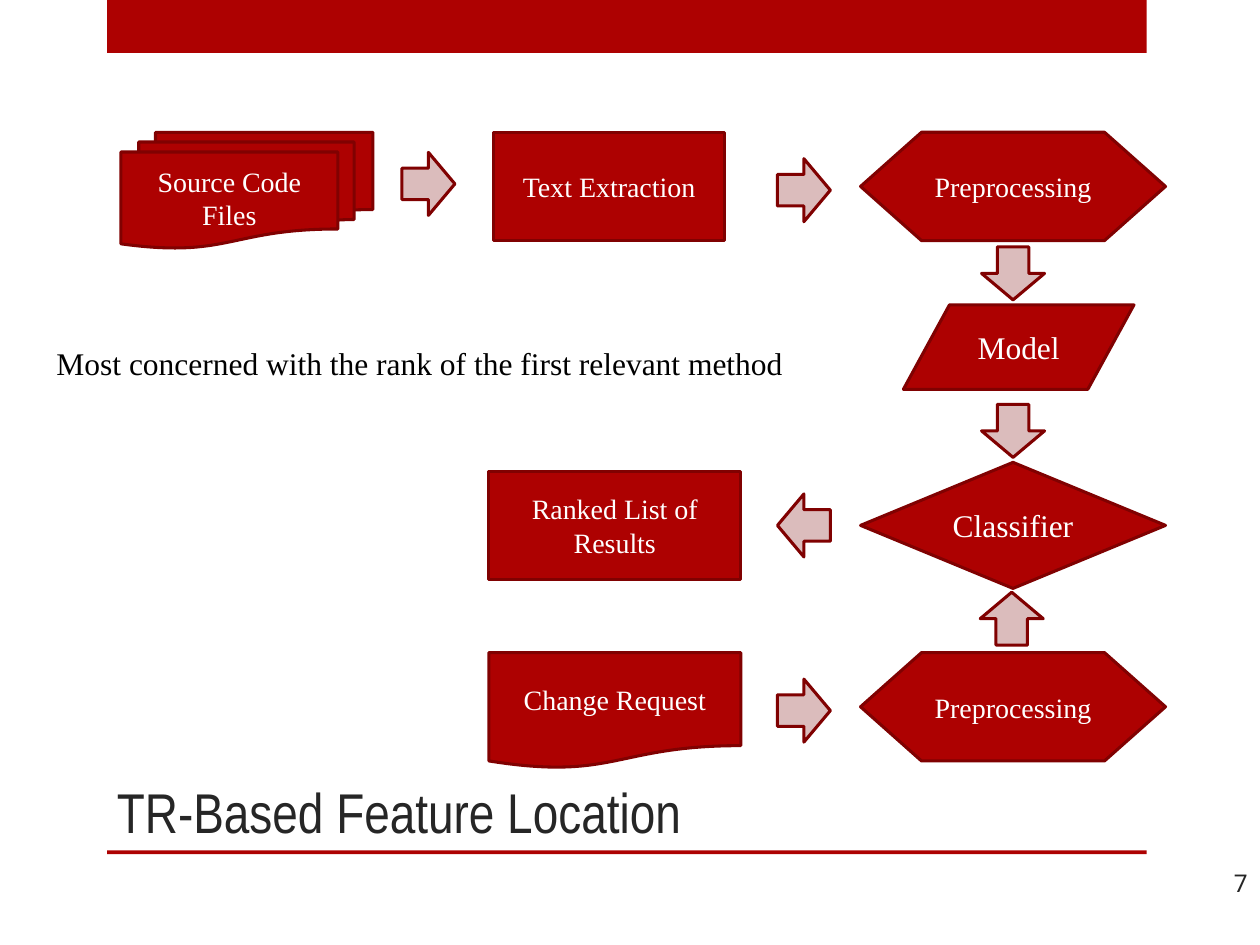
from pptx import Presentation
from pptx.dml.color import RGBColor
from pptx.enum.shapes import MSO_SHAPE
from pptx.enum.text import MSO_ANCHOR, PP_ALIGN
from pptx.util import Inches, Pt

RED = RGBColor(0xAD, 0x01, 0x01)
DARK_RED = RGBColor(0x80, 0x01, 0x01)
PINK = RGBColor(0xDB, 0xBC, 0xBC)
WHITE = RGBColor(0xFF, 0xFF, 0xFF)
CHARCOAL = RGBColor(0x26, 0x26, 0x26)
BLACK = RGBColor(0, 0, 0)

SERIF = "Times New Roman"
ARROW_WIDTH, ARROW_HEIGHT = 0.42, 0.5
RIGHT, DOWN, LEFT, UP = 0, 90, 180, 270


def write_text(shape, text, size=16, font=SERIF, color=WHITE,
               align=PP_ALIGN.CENTER, anchor=MSO_ANCHOR.MIDDLE, wrap=True):
    frame = shape.text_frame
    frame.word_wrap = wrap
    frame.vertical_anchor = anchor
    paragraph = frame.paragraphs[0]
    paragraph.alignment = align
    run = paragraph.add_run()
    run.text = text
    run.font.size = Pt(size)
    run.font.name = font
    run.font.color.rgb = color


def add_label(slide, box, text, **text_format):
    label = slide.shapes.add_textbox(*map(Inches, box))
    write_text(label, text, **text_format)


def add_filled(slide, preset, box, fill=RED, outline=DARK_RED):
    shape = slide.shapes.add_shape(preset, *map(Inches, box))
    shape.shadow.inherit = False
    shape.fill.solid()
    shape.fill.fore_color.rgb = fill
    if outline is None:
        shape.line.fill.background()
    else:
        shape.line.color.rgb = outline
        shape.line.width = Pt(1.75)
    return shape


def add_frame(slide, left, top, width, height):
    """Top band, title and the rule below it."""
    band_height, rule_height = 0.42, 0.03
    title_height = 1.75
    rule_top = top + height - rule_height
    for bar_top, bar_height in ((top, band_height), (rule_top, rule_height)):
        add_filled(slide, MSO_SHAPE.RECTANGLE,
                   (left, bar_top, width, bar_height), outline=None)
    add_label(slide, (left - 0.02, rule_top - title_height, width, title_height),
              "TR-Based Feature Location", size=32, font="Arial Narrow",
              color=CHARCOAL, align=PP_ALIGN.LEFT, anchor=MSO_ANCHOR.BOTTOM)


def add_flowchart(slide, left, top):
    """Steps and arrows, measured from the top left corner of the chart."""
    # Steps: preset, x, y, width, height, text, text size
    steps = (
        (MSO_SHAPE.FLOWCHART_MULTIDOCUMENT, 0, 0, 2, 0.92, "Source Code Files", 16),
        (MSO_SHAPE.FLOWCHART_PROCESS, 2.96, 0, 1.83, 0.86, "Text Extraction", 16),
        (MSO_SHAPE.FLOWCHART_PREPARATION, 5.87, 0, 2.42, 0.86, "Preprocessing", 16),
        (MSO_SHAPE.FLOWCHART_DATA, 6.21, 1.37, 1.83, 0.67, "Model", 18),
        (MSO_SHAPE.FLOWCHART_DECISION, 5.87, 2.62, 2.42, 1, "Classifier", 18),
        (MSO_SHAPE.FLOWCHART_PROCESS, 2.92, 2.69, 2, 0.86, "Ranked List of Results", 16),
        (MSO_SHAPE.FLOWCHART_DOCUMENT, 2.92, 4.13, 2, 0.92, "Change Request", 16),
        (MSO_SHAPE.FLOWCHART_PREPARATION, 5.87, 4.13, 2.42, 0.86, "Preprocessing", 16),
    )
    for preset, x, y, width, height, text, size in steps:
        step = add_filled(slide, preset, (left + x, top + y, width, height))
        write_text(step, text, size=size)

    # Arrows: x, y, direction as clockwise rotation
    arrows = (
        (2.23, 0.16, RIGHT),
        (5.21, 0.21, RIGHT),
        (6.87, 0.87, DOWN),
        (6.87, 2.12, DOWN),
        (5.21, 2.87, LEFT),
        (6.86, 3.61, UP),
        (5.21, 4.34, RIGHT),
    )
    for x, y, direction in arrows:
        arrow = add_filled(slide, MSO_SHAPE.RIGHT_ARROW,
                           (left + x, top + y, ARROW_WIDTH, ARROW_HEIGHT), fill=PINK)
        arrow.rotation = direction


def main():
    presentation = Presentation()
    presentation.slide_width = Inches(10)
    presentation.slide_height = Inches(7.5)
    slide = presentation.slides.add_slide(presentation.slide_layouts[6])

    add_frame(slide, 0.85, 0, 8.25, 6.78)
    add_flowchart(slide, 0.96, 1.05)

    # Remark beside the flow
    add_label(slide, (0.35, 2.68, 6.03, 0.4),
              "Most concerned with the rank of the first relevant method",
              size=18, color=BLACK, align=PP_ALIGN.LEFT,
              anchor=MSO_ANCHOR.TOP, wrap=False)
    # Page number
    add_label(slide, (9.33, 6.78, 0.67, 0.45), "7", size=14, font="Roboto",
              color=CHARCOAL, align=PP_ALIGN.RIGHT)

    presentation.save("out.pptx")


if __name__ == "__main__":
    main()
